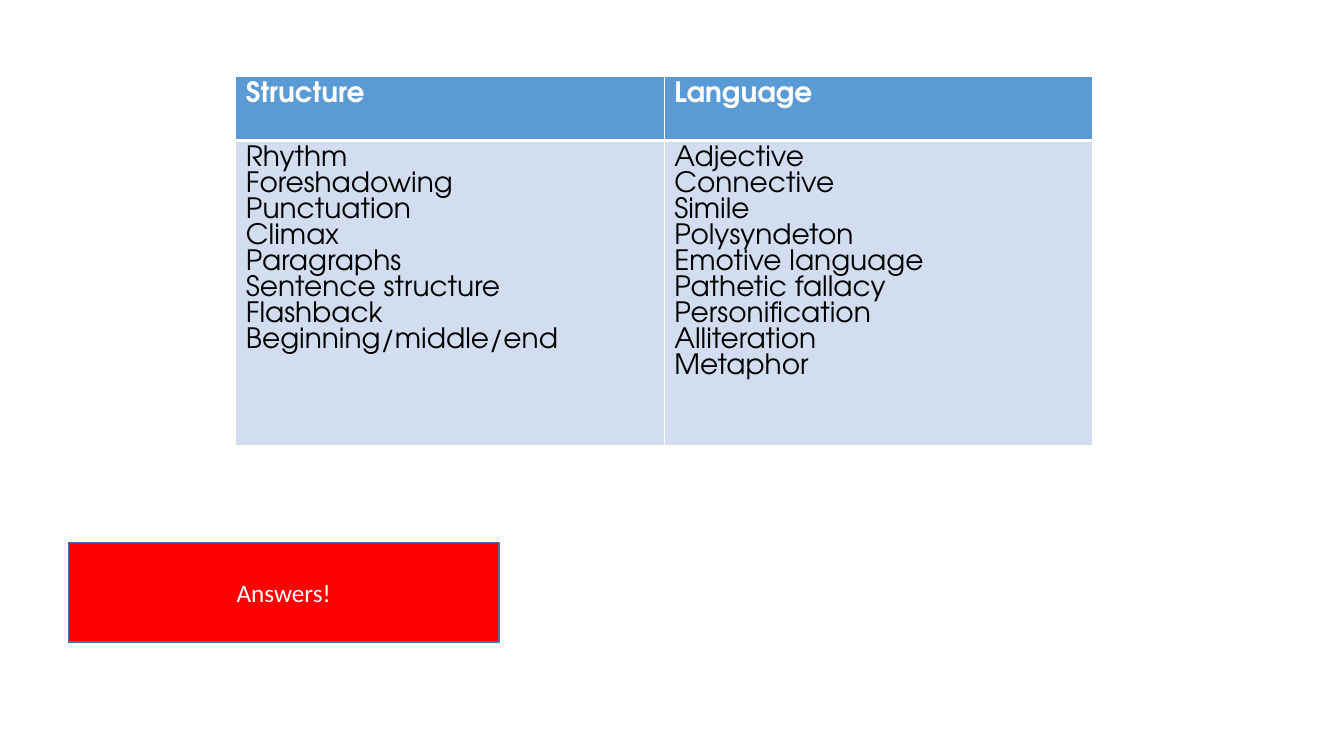
from lxml.etree import SubElement
from pptx import Presentation
from pptx.dml.color import RGBColor
from pptx.enum.shapes import MSO_SHAPE
from pptx.enum.text import MSO_ANCHOR, PP_ALIGN
from pptx.oxml.ns import qn
from pptx.util import Pt


def colour(value):
    return RGBColor.from_string(value)


def add_border(cell, side, width):
    properties = cell._tc.get_or_add_tcPr()
    border = SubElement(properties, qn(f"a:{side}"), w=str(Pt(width)))
    fill = SubElement(border, qn("a:solidFill"))
    SubElement(fill, qn("a:srgbClr"), val="FFFFFF")


deck = Presentation()
deck.slide_width, deck.slide_height = Pt(960), Pt(540)
page = deck.slides.add_slide(deck.slide_layouts[6])

techniques = [
    ["Structure", "Language"],
    [
        "Rhythm\nForeshadowing\nPunctuation\nClimax\nParagraphs\n"
        "Sentence structure\nFlashback\nBeginning/middle/end",
        "Adjective\nConnective\nSimile\nPolysyndeton\nEmotive language\n"
        "Pathetic fallacy\nPersonification\nAlliteration\nMetaphor",
    ],
]
row_styles = [
    {"height": 45.36, "fill": "5B9BD5", "text": "FFFFFF", "bold": True,
     "borders": {"lnL": 1, "lnR": 1, "lnT": 1, "lnB": 3}},
    {"height": 218.16, "fill": "D2DEEF", "text": "000000", "bold": False,
     "borders": {"lnL": 1, "lnR": 1, "lnT": 3, "lnB": 1}},
]

table = page.shapes.add_table(2, 2, Pt(168.5), Pt(54.9), Pt(612), Pt(263.52)).table
for row, style, texts in zip(table.rows, row_styles, techniques):
    row.height = Pt(style["height"])
    for cell, text in zip(row.cells, texts):
        cell.text = text
        for side, width in style["borders"].items():
            add_border(cell, side, width)
        cell.fill.solid()
        cell.fill.fore_color.rgb = colour(style["fill"])
        for para in cell.text_frame.paragraphs:
            para.line_spacing = Pt(18.6)
            span = para.runs[0]
            font_format = {"name": "TeX Gyre Adventor", "size": Pt(20), "bold": style["bold"]}
            for name, value in font_format.items():
                setattr(span.font, name, value)
            span.font.color.rgb = colour(style["text"])

box = page.shapes.add_shape(MSO_SHAPE.RECTANGLE, Pt(49), Pt(387.5), Pt(307.4), Pt(71))
box.shadow.inherit = False
box.fill.solid()
box.fill.fore_color.rgb = colour("FF0000")
box.line.color.rgb = colour("43739E")
box.line.width = Pt(1)
box.text_frame.vertical_anchor = MSO_ANCHOR.MIDDLE
para = box.text_frame.paragraphs[0]
para.alignment = PP_ALIGN.CENTER
span = para.add_run()
span.text = "Answers!"
for name, value in {"name": "Calibri", "size": Pt(18)}.items():
    setattr(span.font, name, value)
span.font.color.rgb = colour("FFFFFF")

deck.save("out.pptx")
